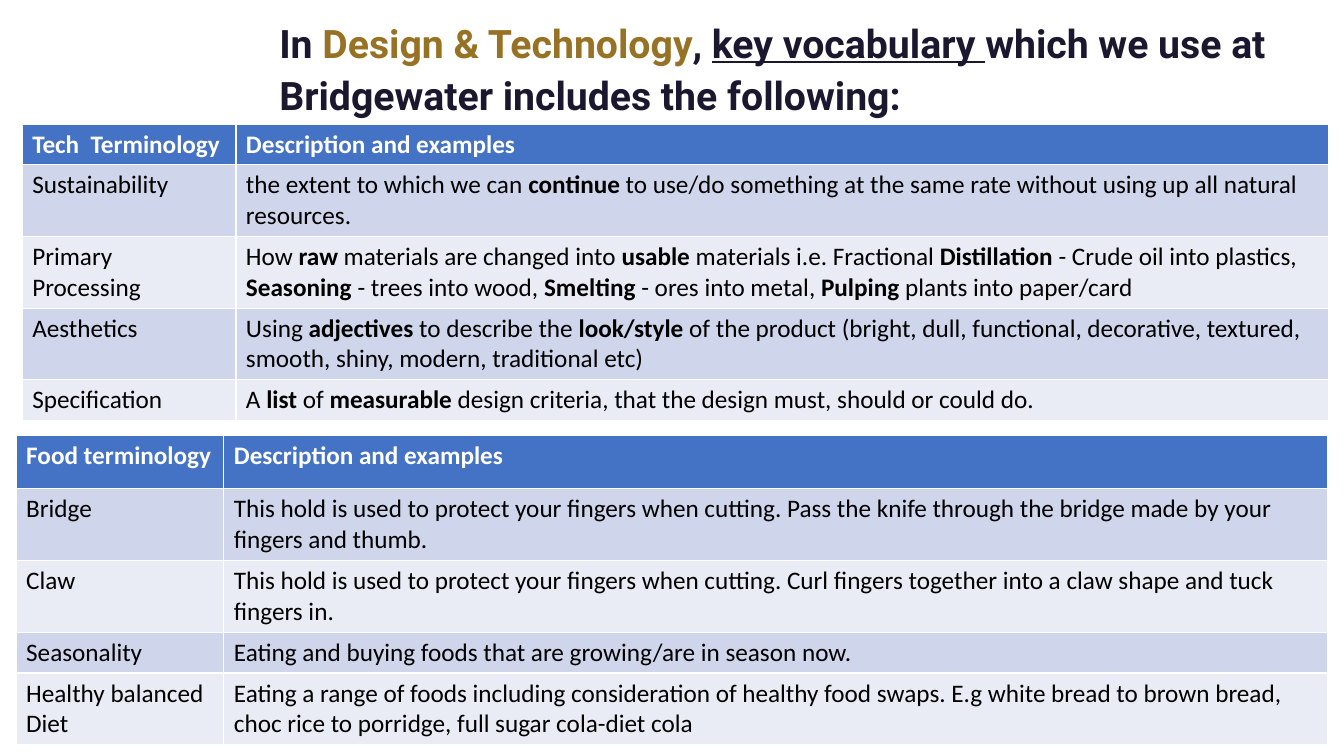
from dataclasses import dataclass

from pptx import Presentation
from pptx.dml.color import RGBColor
from pptx.enum.text import MSO_ANCHOR, MSO_AUTO_SIZE, PP_ALIGN
from pptx.util import Inches, Pt


@dataclass(frozen=True)
class Theme:
    title_font: str = "Roboto"
    body_font: str = "Calibri"
    title_size: int = 28
    title_end_size: int = 36
    body_size: int = 18
    navy: str = "1B172F"
    gold: str = "977124"
    white: str = "FFFFFF"
    black: str = "000000"
    header_fill: str = "4472C4"
    band_fills: tuple = ("CFD5EA", "E9EBF5")


THEME = Theme()
ONE_LINE, TWO_LINES = 0.4, 0.71

TECH_TERMS = [
    ("Tech  Terminology", "Description and examples"),
    ("Sustainability",
     "the extent to which we can **continue** to use/do something at the same rate "
     "without using up all natural resources."),
    ("Primary Processing",
     "How **raw** materials are changed into **usable** materials i.e. Fractional "
     "**Distillation** - Crude oil into plastics, **Seasoning** - trees into wood, "
     "**Smelting** - ores into metal, **Pulping** plants into paper/card"),
    ("Aesthetics",
     "Using **adjectives** to describe the **look/style **of the product (bright, dull, "
     "functional, decorative, textured, smooth, shiny, modern, traditional etc)"),
    ("Specification",
     "A **list** of **measurable** design criteria, that the design must, should or could do."),
]

FOOD_TERMS = [
    ("Food terminology", "Description and examples"),
    ("Bridge",
     "This hold is used to protect your fingers when cutting. Pass the knife through "
     "the bridge made by your fingers and thumb."),
    ("Claw",
     "This hold is used to protect your fingers when cutting. Curl fingers together "
     "into a claw shape and tuck fingers in."),
    ("Seasonality", "Eating and buying foods that are growing/are in season now."),
    ("Healthy balanced Diet",
     "Eating a range of foods including consideration of healthy food swaps. E.g white "
     "bread to brown bread, choc rice to porridge, full sugar cola-diet cola"),
]


def add_styled_run(paragraph, text, font_name, size, color, bold, underline=False):
    run = paragraph.add_run()
    run.text = text
    run.font.name = font_name
    run.font.size = Pt(size)
    run.font.bold = bold
    run.font.underline = underline
    run.font.color.rgb = RGBColor.from_string(color)


def set_heading(slide):
    heading = slide.shapes.title
    heading.left, heading.top = Inches(2.67), Inches(-0.4)
    heading.width, heading.height = Inches(10.37), Inches(1.65)
    frame = heading.text_frame
    frame.word_wrap = True
    frame.auto_size = MSO_AUTO_SIZE.NONE
    frame.vertical_anchor = MSO_ANCHOR.BOTTOM
    line = frame.paragraphs[0]
    line.alignment = PP_ALIGN.LEFT
    line.line_spacing = 0.9
    for text, color, size, underline in (
        ("In ", THEME.navy, THEME.title_size, False),
        ("Design & Technology", THEME.gold, THEME.title_size, False),
        (", ", THEME.navy, THEME.title_size, False),
        ("key vocabulary ", THEME.navy, THEME.title_size, True),
        ("which we use at Bridgewater includes the following:",
         THEME.navy, THEME.title_size, False),
        (" ", THEME.navy, THEME.title_end_size, False),
    ):
        add_styled_run(line, text, THEME.title_font, size, color, True, underline)


def fill_cell(cell, marked_text, fill, color, is_header):
    cell.fill.solid()
    cell.fill.fore_color.rgb = RGBColor.from_string(fill)
    paragraph = cell.text_frame.paragraphs[0]
    for index, part in enumerate(marked_text.split("**")):
        if part:
            add_styled_run(paragraph, part, THEME.body_font, THEME.body_size,
                           color, is_header or index % 2 == 1)


def add_vocabulary(slide, terms, left, top, widths, heights):
    table = slide.shapes.add_table(
        len(terms), len(widths), Inches(left), Inches(top),
        Inches(sum(widths)), Inches(sum(heights))).table
    for column, width in zip(table.columns, widths):
        column.width = Inches(width)
    for row_index, (row, height, texts) in enumerate(zip(table.rows, heights, terms)):
        row.height = Inches(height)
        is_header = row_index == 0
        fill = THEME.header_fill if is_header else THEME.band_fills[(row_index - 1) % 2]
        color = THEME.white if is_header else THEME.black
        for cell, text in zip(row.cells, texts):
            fill_cell(cell, text, fill, color, is_header)


def main():
    deck = Presentation()
    deck.slide_width, deck.slide_height = Inches(13.33), Inches(7.5)
    slide = deck.slides.add_slide(deck.slide_layouts[5])
    set_heading(slide)
    add_vocabulary(slide, TECH_TERMS, 0.22, 1.23, (2.12, 10.84),
                   (ONE_LINE, TWO_LINES, TWO_LINES, TWO_LINES, ONE_LINE))
    add_vocabulary(slide, FOOD_TERMS, 0.16, 4.32, (2.06, 10.95),
                   (0.53, TWO_LINES, TWO_LINES, ONE_LINE, TWO_LINES))
    deck.save("out.pptx")


if __name__ == "__main__":
    main()
